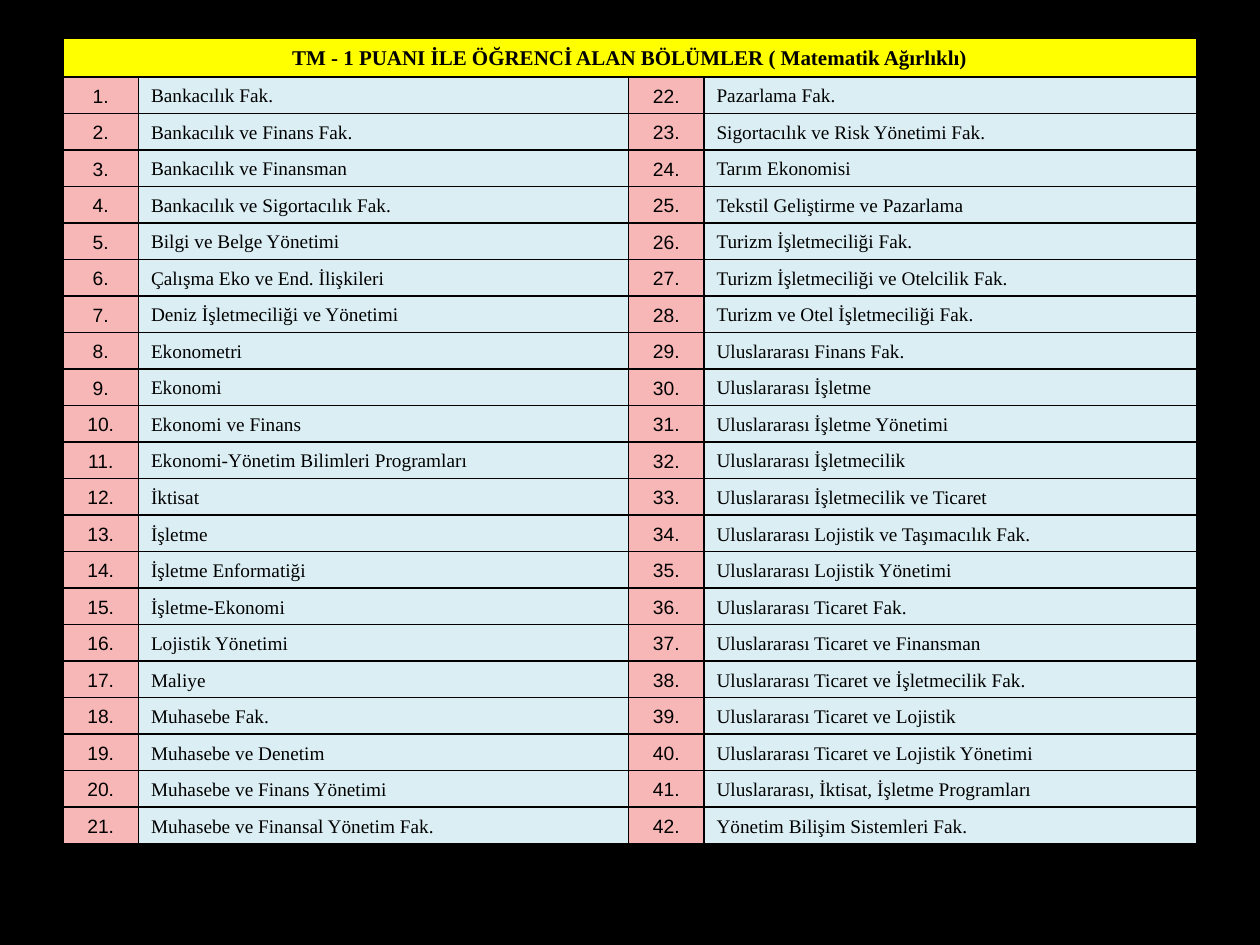
import pptx
import pptx.dml.color
import pptx.enum.text
import pptx.oxml
import pptx.oxml.ns
import pptx.util

Cm = pptx.util.Cm
Pt = pptx.util.Pt
PP_ALIGN = pptx.enum.text.PP_ALIGN

COLORS = {
    "black": "000000",
    "title": "FFFF00",
    "number": "F8B7B7",
    "name": "DBEEF4",
}

DEPARTMENTS = [
    "Bankacılık Fak.",
    "Bankacılık ve Finans Fak.",
    "Bankacılık ve Finansman",
    "Bankacılık ve Sigortacılık Fak.",
    "Bilgi ve Belge Yönetimi",
    "Çalışma Eko ve End. İlişkileri",
    "Deniz İşletmeciliği ve Yönetimi",
    "Ekonometri",
    "Ekonomi",
    "Ekonomi ve Finans",
    "Ekonomi-Yönetim Bilimleri Programları",
    "İktisat",
    "İşletme",
    "İşletme Enformatiği",
    "İşletme-Ekonomi",
    "Lojistik Yönetimi",
    "Maliye",
    "Muhasebe Fak.",
    "Muhasebe ve Denetim",
    "Muhasebe ve Finans Yönetimi",
    "Muhasebe ve Finansal Yönetim Fak.",
    "Pazarlama Fak.",
    "Sigortacılık ve Risk Yönetimi Fak.",
    "Tarım Ekonomisi",
    "Tekstil Geliştirme ve Pazarlama",
    "Turizm İşletmeciliği Fak.",
    "Turizm İşletmeciliği ve Otelcilik Fak.",
    "Turizm ve Otel İşletmeciliği Fak.",
    "Uluslararası Finans Fak.",
    "Uluslararası İşletme",
    "Uluslararası İşletme Yönetimi",
    "Uluslararası İşletmecilik",
    "Uluslararası İşletmecilik ve Ticaret",
    "Uluslararası Lojistik ve Taşımacılık Fak.",
    "Uluslararası Lojistik Yönetimi",
    "Uluslararası Ticaret Fak.",
    "Uluslararası Ticaret ve Finansman",
    "Uluslararası Ticaret ve İşletmecilik Fak.",
    "Uluslararası Ticaret ve Lojistik",
    "Uluslararası Ticaret ve Lojistik Yönetimi",
    "Uluslararası, İktisat, İşletme Programları",
    "Yönetim Bilişim Sistemleri Fak.",
]


def rgb(name):
    return pptx.dml.color.RGBColor.from_string(COLORS[name])


def write_cell(cell, text, fill, font, size=11, bold=False, align=PP_ALIGN.LEFT):
    cell.text = text
    cell.vertical_anchor = pptx.enum.text.MSO_ANCHOR.BOTTOM
    p = cell.text_frame.paragraphs[0]
    p.alignment = align
    p.font.name = font
    p.font.size = Pt(size)
    p.font.bold = bold
    p.font.color.rgb = rgb("black")
    tc_pr = cell._tc.get_or_add_tcPr()
    for side in ("lnL", "lnR", "lnT", "lnB"):
        tc_pr.append(pptx.oxml.parse_xml(
            f'<a:{side} {pptx.oxml.ns.nsdecls("a")} w="{Pt(1)}"><a:solidFill>'
            f'<a:srgbClr val="{COLORS["black"]}"/></a:solidFill></a:{side}>'
        ))
    cell.fill.solid()
    cell.fill.fore_color.rgb = rgb(fill)


prs = pptx.Presentation()
prs.slide_width = Cm(25.4)
prs.slide_height = Cm(19.05)
s = prs.slides.add_slide(prs.slide_layouts[6])
s.background.fill.solid()
s.background.fill.fore_color.rgb = rgb("black")

per_column = len(DEPARTMENTS) // 2
widths = [1.52, 9.88, 1.52, 9.93]
title_height = Cm(0.78)
list_height = Cm(15.46)
table = s.shapes.add_table(
    per_column + 1, len(widths), Cm(1.27), Cm(0.77),
    Cm(sum(widths)), title_height + list_height,
).table
table.first_row = False
table.horz_banding = False

for column, width in zip(table.columns, widths):
    column.width = Cm(width)
for row in table.rows:
    row.height = list_height // per_column
table.rows[0].height = title_height

table.cell(0, 0).merge(table.cell(0, len(widths) - 1))
write_cell(
    table.cell(0, 0), "TM - 1 PUANI İLE ÖĞRENCİ ALAN BÖLÜMLER ( Matematik Ağırlıklı)",
    "title", "Times New Roman", size=12, bold=True, align=PP_ALIGN.CENTER,
)

for i, department in enumerate(DEPARTMENTS):
    half, row = divmod(i, per_column)
    write_cell(table.cell(row + 1, 2 * half), f"{i + 1}.", "number", "Arial",
               align=PP_ALIGN.CENTER)
    write_cell(table.cell(row + 1, 2 * half + 1), department, "name", "Times New Roman")

prs.save("out.pptx")
